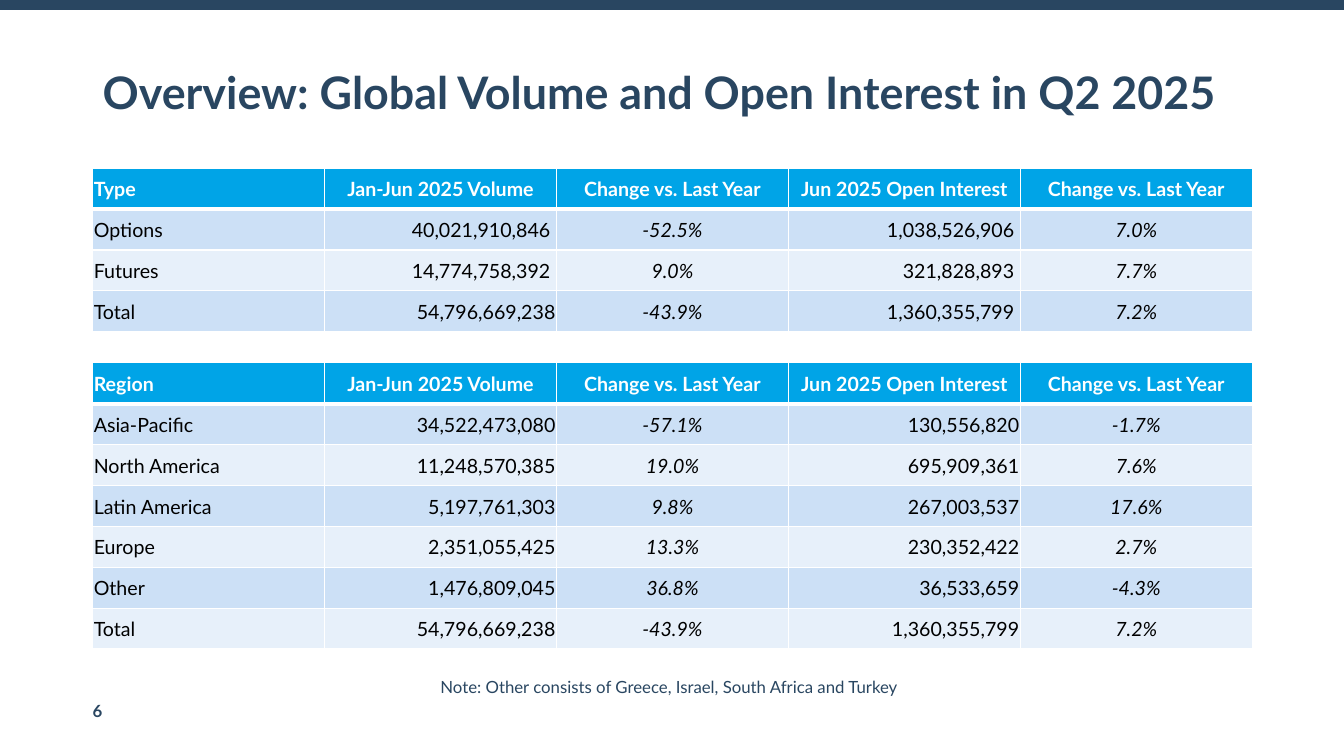
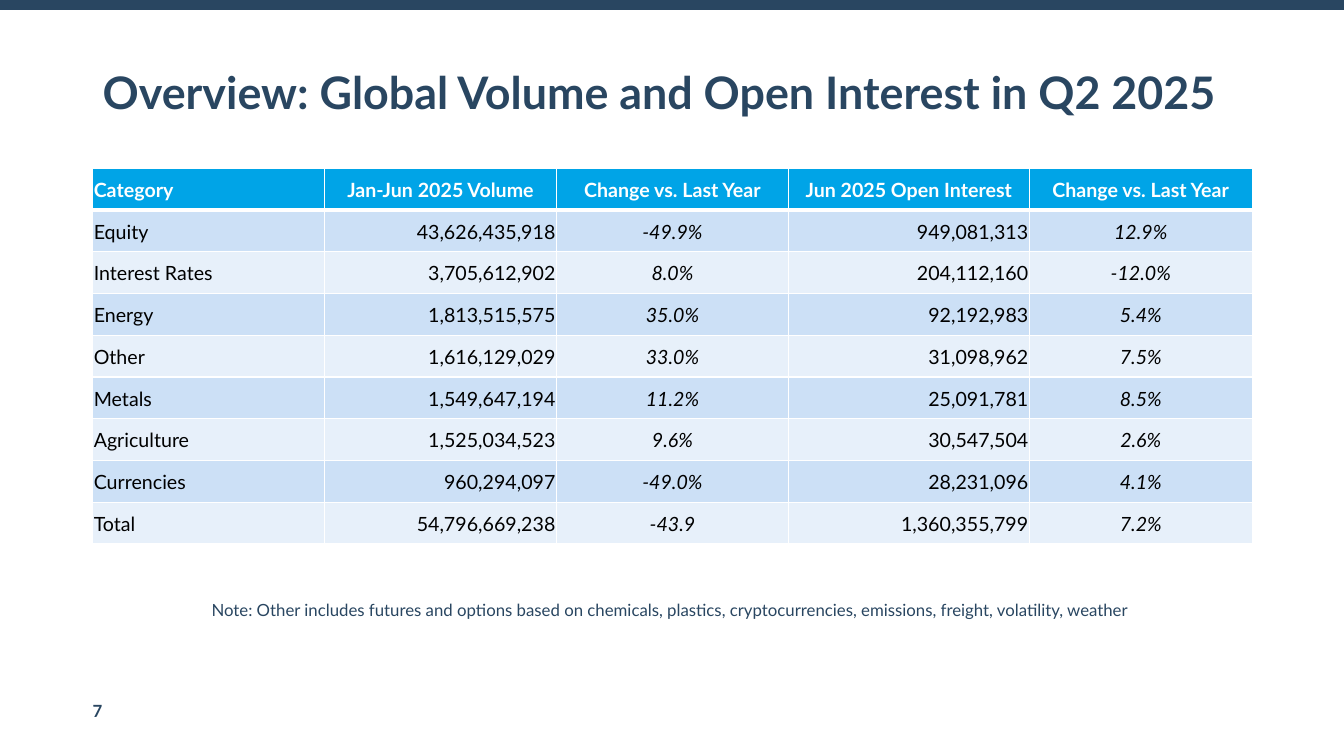
"""Build two slides of global volume and open interest tables."""
import dataclasses

import pptx
import pptx.dml.color
import pptx.enum.shapes
import pptx.enum.text
import pptx.oxml
import pptx.oxml.ns
import pptx.util

Inches = pptx.util.Inches
Pt = pptx.util.Pt
Align = pptx.enum.text.PP_ALIGN
Anchor = pptx.enum.text.MSO_ANCHOR
Fit = pptx.enum.text.MSO_AUTO_SIZE


@dataclasses.dataclass(frozen=True)
class Theme:
    font: str = "Lato"
    navy: str = "294661"
    head: str = "00A4E7"
    bands: tuple = ("CCE0F6", "E7F0FA")
    white: str = "FFFFFF"
    black: str = "000000"
    title: float = 32
    body: float = 14
    small: float = 12
    bar: float = 7.75
    rule: float = 1
    thick: float = 3


WIDTH, HEIGHT = 13.33, 7.5
LEFT, SPAN = 0.92, 11.5
TOP = 1.67
INSET, PAD = 0.01, 0.06
TITLE = "Overview: Global Volume and Open Interest in Q2 2025"
HEADS = ["Jan-Jun 2025 Volume", "Change vs. Last Year",
         "Jun 2025 Open Interest", "Change vs. Last Year"]
ALIGNS = [Align.LEFT, Align.RIGHT, Align.CENTER, Align.RIGHT, Align.CENTER]
EVEN = [SPAN / 5] * 5
WIDE = [2.3, 2.3, 2.3, 2.39, 2.21]

TYPES = [
    ["Options", "40,021,910,846", "-52.5%", "1,038,526,906", "7.0%"],
    ["Futures", "14,774,758,392", "9.0%", "321,828,893", "7.7%"],
    ["Total", "54,796,669,238", "-43.9%", "1,360,355,799", "7.2%"],
]
PADDED = {(1, 1), (2, 1), (1, 3), (2, 3), (3, 3)}
REGIONS = [
    ["Asia-Pacific", "34,522,473,080", "-57.1%", "130,556,820", "-1.7%"],
    ["North America", "11,248,570,385", "19.0%", "695,909,361", "7.6%"],
    ["Latin America", "5,197,761,303", "9.8%", "267,003,537", "17.6%"],
    ["Europe", "2,351,055,425", "13.3%", "230,352,422", "2.7%"],
    ["Other", "1,476,809,045", "36.8%", "36,533,659", "-4.3%"],
    ["Total", "54,796,669,238", "-43.9%", "1,360,355,799", "7.2%"],
]
GROUPS = [
    ["Equity", "43,626,435,918", "-49.9%", "949,081,313", "12.9%"],
    ["Interest Rates", "3,705,612,902", "8.0%", "204,112,160", "-12.0%"],
    ["Energy", "1,813,515,575", "35.0%", "92,192,983", "5.4%"],
    ["Other", "1,616,129,029", "33.0%", "31,098,962", "7.5%"],
    ["Metals", "1,549,647,194", "11.2%", "25,091,781", "8.5%"],
    ["Agriculture", "1,525,034,523", "9.6%", "30,547,504", "2.6%"],
    ["Currencies", "960,294,097", "-49.0%", "28,231,096", "4.1%"],
    ["Total", "54,796,669,238", "-43.9", "1,360,355,799", "7.2%"],
]


class Deck:
    """Hold the theme, the file and the current slide."""

    def __init__(self, theme):
        """Start an empty wide deck."""
        self.theme = theme
        self.file = pptx.Presentation()
        self.file.slide_width = Inches(WIDTH)
        self.file.slide_height = Inches(HEIGHT)
        self.slide = None

    def page(self, number):
        """Add a slide with its top bar, number and title."""
        self.slide = self.file.slides.add_slide(self.file.slide_layouts[6])
        self.bar()
        foot = self.text(str(number), LEFT, 6.95, 0.24, 0.2,
                         self.theme.small, True, Anchor.BOTTOM)
        foot.margin_left = foot.margin_right = 0
        foot.margin_top = foot.margin_bottom = 0
        title = self.text(TITLE, LEFT, 0.22, SPAN, 1.45,
                          self.theme.title, True, Anchor.MIDDLE)
        title.word_wrap = True
        title.paragraphs[0].line_spacing = 0.9

    def bar(self):
        """Draw the band along the top edge."""
        line = self.slide.shapes.add_connector(
            pptx.enum.shapes.MSO_CONNECTOR.STRAIGHT,
            Inches(0), Inches(0.05), Inches(WIDTH), Inches(0.05))
        line.line.width = Pt(self.theme.bar)
        line.line.color.rgb = self.tint(self.theme.navy)
        line._element.spPr.append(pptx.oxml.parse_xml(
            f"<a:effectLst {pptx.oxml.ns.nsdecls('a')}/>"))

    def text(self, words, left, top, width, height, size, bold, anchor):
        """Add a text box and return its frame."""
        box = self.slide.shapes.add_textbox(
            Inches(left), Inches(top), Inches(width), Inches(height))
        frame = box.text_frame
        frame.text = words
        frame.vertical_anchor = anchor
        self.style(frame, size, self.theme.navy, bold)
        return frame

    def note(self, words, left, top, width):
        """Add a note on one line."""
        frame = self.text(words, left, top, width, 0.3,
                          self.theme.small, False, Anchor.TOP)
        frame.word_wrap = False
        frame.auto_size = Fit.SHAPE_TO_FIT_TEXT

    def table(self, name, data, top, height, widths, padded=()):
        """Add a banded table under a header row."""
        rows = [[name] + HEADS] + data
        shape = self.slide.shapes.add_table(
            len(rows), len(widths), Inches(LEFT), Inches(top),
            Inches(SPAN), Inches(height))
        grid = shape.table
        grid.horz_banding = False
        for col, width in zip(grid.columns, widths):
            col.width = Inches(width)
        for row in grid.rows:
            row.height = Inches(height / len(rows))
        for r, row in enumerate(rows):
            for c, words in enumerate(row):
                pad = PAD if (r, c) in padded else INSET
                self.cell(grid.cell(r, c), words, r, c, pad)

    def cell(self, cell, words, row, col, pad):
        """Fill and style one table cell."""
        theme = self.theme
        head = row == 0
        cell.text_frame.text = words
        cell.vertical_anchor = Anchor.MIDDLE
        cell.margin_left = cell.margin_top = Inches(INSET)
        cell.margin_right = Inches(pad)
        cell.margin_bottom = 0
        cell.fill.solid()
        cell.fill.fore_color.rgb = self.tint(
            theme.head if head else theme.bands[(row - 1) % 2])
        self.style(cell.text_frame, theme.body,
                   theme.white if head else theme.black, head,
                   not head and col in (2, 4))
        cell.text_frame.paragraphs[0].alignment = (
            Align.CENTER if head and col else ALIGNS[col])
        self.edges(cell, row)

    def edges(self, cell, row):
        """Draw white cell borders, thick below the header."""
        theme = self.theme
        sizes = {"L": theme.rule, "R": theme.rule,
                 "T": theme.thick if row == 1 else theme.rule,
                 "B": theme.thick if row == 0 else theme.rule}
        props = cell._tc.get_or_add_tcPr()
        for spot, (side, size) in enumerate(sizes.items()):
            props.insert(spot, pptx.oxml.parse_xml(
                f"<a:ln{side} {pptx.oxml.ns.nsdecls('a')} w='{Pt(size)}'>"
                f"<a:solidFill><a:srgbClr val='{theme.white}'/></a:solidFill>"
                f"</a:ln{side}>"))

    def style(self, frame, size, color, bold, slant=False):
        """Format every run of a frame."""
        for para in frame.paragraphs:
            for run in para.runs:
                run.font.name = self.theme.font
                run.font.size = Pt(size)
                run.font.bold = bold
                run.font.italic = slant
                run.font.color.rgb = self.tint(color)

    def tint(self, code):
        """Turn a hex code into a colour."""
        return pptx.dml.color.RGBColor.from_string(code)


def main():
    """Build and save both slides."""
    deck = Deck(Theme())
    deck.page(6)
    deck.table("Type", TYPES, TOP, 1.62, EVEN, PADDED)
    deck.table("Region", REGIONS, 3.6, 2.84, EVEN)
    deck.note("Note: Other consists of Greece, Israel, South Africa and Turkey",
              4.27, 6.66, 4.8)
    deck.page(7)
    deck.table("Category", GROUPS, TOP, 3.73, WIDE)
    deck.note("Note: Other includes futures and options based on chemicals, "
              "plastics, cryptocurrencies, emissions, freight, volatility, "
              "weather", 2, 5.9, 9.34)
    deck.file.save("out.pptx")


if __name__ == "__main__":
    main()
